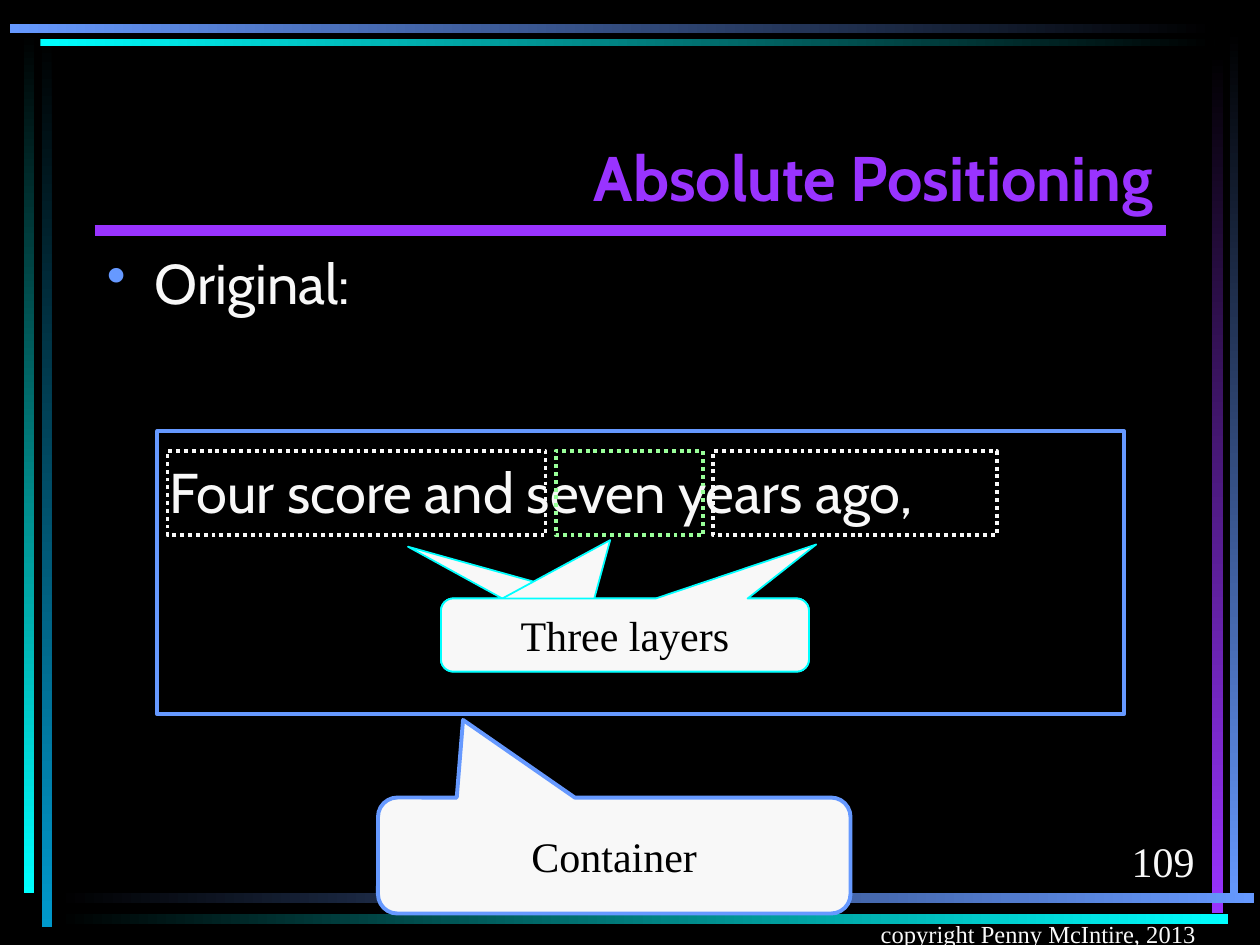
import pptx
import pptx.dml.color
import pptx.enum.dml
import pptx.enum.shapes
import pptx.enum.text
import pptx.oxml.ns
import pptx.util
from lxml import etree

Inches = pptx.util.Inches
Pt = pptx.util.Pt
SHAPE = pptx.enum.shapes.MSO_SHAPE
ALIGN = pptx.enum.text.PP_ALIGN
ANCHOR = pptx.enum.text.MSO_ANCHOR

THEME = {
    "black": "000000", "white": "F8F8F8", "violet": "9933FF", "blue": "6699FF",
    "cyan": "00FFFF", "teal": "0099CC", "green": "99FF99",
    "heading_font": "Cabin", "plain_font": "Times New Roman",
    "title": 36, "body": 32, "label": 24, "footer": 14,
}

# Frame bars: left, top, width, height, start colour, end colour
FRAME_BARS = [
    (0.33, 0.28, 0.08, 7.08, "black", "teal"),
    (0.19, 0.25, 0.08, 6.84, "black", "cyan"),
    (9.76, 0.24, 0.07, 6.93, "black", "blue"),
    (9.62, 0.42, 0.09, 6.83, "black", "violet"),
    (0.45, 7.09, 9.5, 0.08, "black", "blue"),
    (0.45, 7.25, 9.3, 0.08, "black", "cyan"),
    (0.32, 0.31, 9.32, 0.06, "cyan", "black"),
    (0.08, 0.19, 9.56, 0.07, "blue", "black"),
]

# Text boxes: text, box, font, size, colour, alignment, anchor
TEXTS = {
    "number": ("109", (7.5, 6.58, 2.08, 0.5), "plain_font", "label", "white",
               ALIGN.RIGHT, ANCHOR.BOTTOM),
    "copyright": ("copyright Penny McIntire, 2013", (6.42, 7.08, 3.17, 0.5),
                  "plain_font", "footer", "white", ALIGN.RIGHT, ANCHOR.BOTTOM),
    "title": ("Absolute Positioning", (0.75, 0.5, 8.5, 1.25),
              "heading_font", "title", "violet", ALIGN.RIGHT, ANCHOR.BOTTOM),
    "bullet": ("Original:", (0.75, 1.92, 8.67, 0.92),
               "heading_font", "body", "white", ALIGN.LEFT, ANCHOR.TOP),
}

CONTAINER_BOX = (1.25, 3.42, 7.67, 2.25)
CONTAINER_TEXT = "Four score and seven years ago,"
CONTAINER_CALLOUT_BOX = (3, 6.33, 3.75, 0.92)
CONTAINER_POINTER = (-0.32, -1.17)

LAYERS = [(3, "white"), (1.17, "green"), (2.25, "white")]  # width, colour
LAYER_LEFT, LAYER_TOP, LAYER_HEIGHT, LAYER_GAP = 1.33, 3.58, 0.67, 0.08
LAYER_CALLOUT_BOX = (3.5, 4.75, 2.92, 0.58)
LAYER_POINTERS = [(-0.59, -1.21), (-0.04, -1.3), (0.52, -1.24)]


def color(name):
    return pptx.dml.color.RGBColor.from_string(THEME[name])


def set_text(shape, text, font, size, color_name, align, anchor):
    frame = shape.text_frame
    frame.word_wrap = True
    frame.vertical_anchor = anchor
    frame.text = text
    paragraph = frame.paragraphs[0]
    paragraph.alignment = align
    run_font = paragraph.runs[0].font
    run_font.name = THEME[font]
    run_font.size = Pt(THEME[size])
    run_font.color.rgb = color(color_name)
    return paragraph


def add_shape(slide, preset, box, fill=None, line=None, line_width=2.25):
    shape = slide.shapes.add_shape(preset, *map(Inches, box))
    shape.shadow.inherit = False
    if fill:
        shape.fill.solid()
        shape.fill.fore_color.rgb = color(fill)
    else:
        shape.fill.background()
    if line:
        shape.line.color.rgb = color(line)
        shape.line.width = Pt(line_width)
    else:
        shape.line.fill.background()
    return shape


def add_frame_bar(slide, left, top, width, height, start, end):
    """Add a thin bar whose gradient runs along its longer side."""
    bar = add_shape(slide, SHAPE.RECTANGLE, (left, top, width, height))
    bar.fill.gradient()
    bar.fill.gradient_angle = 270 if height > width else 0
    for stop, name in zip(bar.fill.gradient_stops, (start, end)):
        stop.color.rgb = color(name)


def add_title_rule(slide):
    rule = slide.shapes.add_connector(
        pptx.enum.shapes.MSO_CONNECTOR.STRAIGHT,
        Inches(0.75), Inches(1.83), Inches(9.25), Inches(1.83))
    rule.line.color.rgb = color("violet")
    rule.line.width = Pt(6)
    properties = rule._element.spPr
    etree.SubElement(properties, pptx.oxml.ns.qn("a:effectLst"))


def add_bullet(paragraph):
    properties = paragraph._p.get_or_add_pPr()
    properties.set("marL", str(Inches(0.38)))
    properties.set("indent", str(-Inches(0.38)))
    qn = pptx.oxml.ns.qn
    bullet_color = etree.SubElement(properties, qn("a:buClr"))
    etree.SubElement(bullet_color, qn("a:srgbClr"), val=THEME["blue"])
    etree.SubElement(properties, qn("a:buChar"), char="•")


def add_callout(slide, box, pointer, line, line_width, text=None):
    callout = add_shape(slide, SHAPE.ROUNDED_RECTANGULAR_CALLOUT, box,
                        "white", line, line_width)
    callout.adjustments[0], callout.adjustments[1] = pointer
    if text:
        set_text(callout, text, "plain_font", "label", "black",
                 ALIGN.CENTER, ANCHOR.MIDDLE)


def add_layers(slide):
    left = LAYER_LEFT
    for width, line in LAYERS:
        layer = add_shape(slide, SHAPE.RECTANGLE,
                          (left, LAYER_TOP, width, LAYER_HEIGHT), line=line)
        layer.line.dash_style = pptx.enum.dml.MSO_LINE.ROUND_DOT
        left += width + LAYER_GAP


def main():
    presentation = pptx.Presentation()
    presentation.slide_width = Inches(10)
    presentation.slide_height = Inches(7.5)
    slide = presentation.slides.add_slide(presentation.slide_layouts[6])
    slide.background.fill.solid()
    slide.background.fill.fore_color.rgb = color("black")

    for bar in FRAME_BARS:
        add_frame_bar(slide, *bar)
    add_title_rule(slide)

    paragraphs = {}
    for name, (text, box, *style) in TEXTS.items():
        text_box = slide.shapes.add_textbox(*map(Inches, box))
        paragraphs[name] = set_text(text_box, text, *style)
    paragraphs["title"].runs[0].font.bold = True
    add_bullet(paragraphs["bullet"])

    container = add_shape(slide, SHAPE.RECTANGLE, CONTAINER_BOX, line="blue")
    sentence = set_text(container, CONTAINER_TEXT, "heading_font", "body",
                        "white", ALIGN.LEFT, ANCHOR.TOP)
    sentence.line_spacing = 1.3
    add_callout(slide, CONTAINER_CALLOUT_BOX, CONTAINER_POINTER, "blue", 2.25,
                "Container")

    add_layers(slide)
    for pointer in LAYER_POINTERS:
        is_front = pointer == LAYER_POINTERS[-1]
        add_callout(slide, LAYER_CALLOUT_BOX, pointer, "cyan", 1,
                    "Three layers" if is_front else None)

    presentation.save("out.pptx")


if __name__ == "__main__":
    main()
